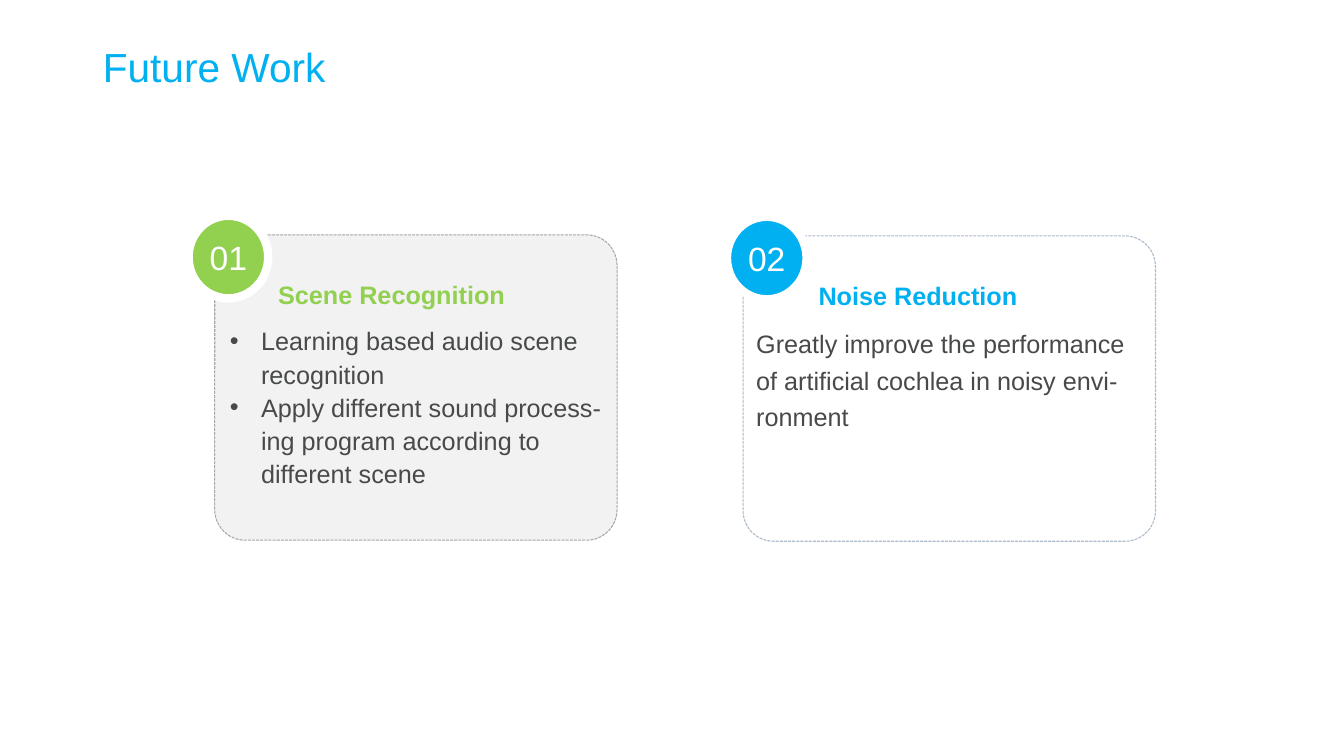
"""Build the Future Work slide with two numbered cards."""
from pptx import Presentation
from pptx.dml.color import RGBColor
from pptx.enum import dml, shapes, text
from pptx.oxml import parse_xml
from pptx.oxml.ns import nsdecls
from pptx.util import Emu, Inches, Pt


def color(value):
    return RGBColor.from_string(value)


def write(shape, lines, size, value, anchor, bold=False, align=text.PP_ALIGN.LEFT, spacing=1.0, bullet=False):
    frame = shape.text_frame
    frame.word_wrap = True
    frame.auto_size = text.MSO_AUTO_SIZE.NONE
    frame.vertical_anchor = anchor
    frame.text = "\n".join(lines)
    for paragraph in frame.paragraphs:
        properties = paragraph._p.get_or_add_pPr()
        indent = Inches(0.31) if bullet else 0
        properties.set("marL", str(indent))
        properties.set("indent", str(-indent))
        mark = 'a:buChar {} char="•"' if bullet else "a:buNone {}"
        properties.append(parse_xml(f"<{mark.format(nsdecls('a'))}/>"))
        paragraph.alignment = align
        paragraph.line_spacing = spacing
        paragraph.space_before = Pt(0)
        paragraph.font.name = "Arial"
        paragraph.font.size = Pt(size)
        paragraph.font.bold = bold
        paragraph.font.color.rgb = color(value)


presentation = Presentation()
presentation.slide_width, presentation.slide_height = Inches(13.33), Inches(7.5)
slide = presentation.slides.add_slide(presentation.slide_layouts[3])
title, *bodies = slide.placeholders

title.left, title.top, title.width, title.height = map(Inches, (0.92, 0.35, 11.5, 0.62))
write(title, ["Future Work"], 29, "00B0F0", text.MSO_ANCHOR.MIDDLE)

cards = [
    ("01", "Scene Recognition",
     ["Learning based audio scene recognition",
      "Apply different sound process-ing program according to different scene"],
     "92D050", "F2F2F2", "A6A6A6", 2.33, (2.13, 3.99), 1.87, 2.66, (2.18, 3.94), 1.1, True),
    ("02", "Noise Reduction",
     ["Greatly improve the performance of artificial cochlea in noisy envi-ronment"],
     "00B0F0", "FFFFFF", "ADBACA", 2.34, (7.37, 4.09), 7.21, 8.02, (7.4, 3.96), 1.2, False),
]

for body, card in zip(bodies, cards):
    (number, heading, lines, accent, fill, outline, top, card_span,
     badge_left, heading_left, body_span, spacing, bullet) = card

    panel = slide.shapes.add_shape(
        shapes.MSO_SHAPE.ROUNDED_RECTANGLE,
        Inches(card_span[0]), Inches(top), Inches(card_span[1]), Inches(3.03))
    panel.adjustments[0] = 0.1
    badge = slide.shapes.add_shape(
        shapes.MSO_SHAPE.OVAL,
        Inches(badge_left), Inches(top - 0.19), Inches(0.79), Inches(0.82))
    for shape, inside, border, weight in ((panel, fill, outline, 0.75), (badge, accent, "FFFFFF", 6)):
        shape.shadow.inherit = False
        shape.fill.solid()
        shape.fill.fore_color.rgb = color(inside)
        shape.line.color.rgb = color(border)
        shape.line.width = Pt(weight)
    panel.line.dash_style = dml.MSO_LINE.SQUARE_DOT

    frame = badge.text_frame
    frame.margin_left = frame.margin_right = frame.margin_top = frame.margin_bottom = Emu(0)
    write(badge, [number], 24, "FFFFFF", text.MSO_ANCHOR.MIDDLE, align=text.PP_ALIGN.CENTER)

    label = slide.shapes.add_textbox(
        Inches(heading_left), Inches(top + 0.16), Inches(3.21), Inches(0.63))
    write(label, [heading], 18, accent, text.MSO_ANCHOR.BOTTOM, bold=True)

    body.left, body.top, body.width, body.height = map(Inches, (body_span[0], 3.15, body_span[1], 1.86))
    write(body, lines, 18, "47494B", text.MSO_ANCHOR.TOP, spacing=spacing, bullet=bullet)
    slide.shapes._spTree.append(body._element)

presentation.save("out.pptx")
